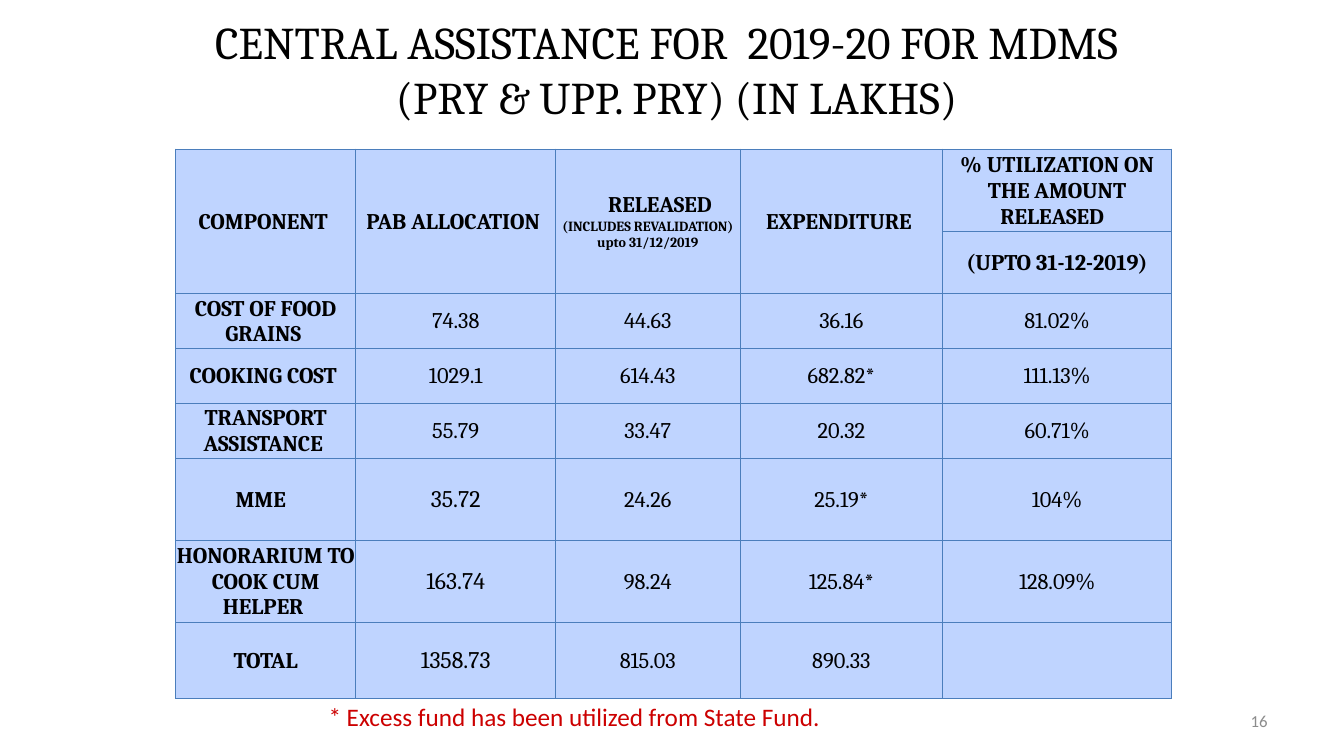
from lxml import etree
from pptx import Presentation
from pptx import util as u
from pptx.dml.color import RGBColor
from pptx.enum import text
from pptx.oxml.ns import qn

COLORS = {"black": "000000", "cell": "BFD4FF", "border": "4B7EBC",
          "note": "CC0000", "number": "8C8C8C"}
LEFT, CENTER, RIGHT = (text.PP_ALIGN.LEFT, text.PP_ALIGN.CENTER,
                       text.PP_ALIGN.RIGHT)
MIDDLE, TOP = text.MSO_ANCHOR.MIDDLE, text.MSO_ANCHOR.TOP

HEADINGS = ["COMPONENT ", "PAB ALLOCATION ", "RELEASED ", "EXPENDITURE ",
            "% UTILIZATION ON THE AMOUNT RELEASED  "]
RELEASED_NOTE = "(INCLUDES REVALIDATION) upto 31/12/2019"
UTILIZATION_NOTE = " (UPTO 31-12-2019) "
COMPONENTS = [
    ["COST OF FOOD GRAINS ", "74.38", "44.63", "36.16", "81.02%"],
    ["COOKING COST ", "1029.1", "614.43", "682.82*", "111.13%"],
    ["TRANSPORT ASSISTANCE ", "55.79", "33.47", "20.32", "60.71%"],
    ["MME  ", "35.72", "24.26", "25.19*", "104%"],
    ["HONORARIUM TO COOK CUM HELPER ", "163.74", "98.24", "125.84*", "128.09%"],
    ["TOTAL", "1358.73", "815.03", "890.33", ""],
]
COLUMN_WIDTHS = [1.79, 1.98, 1.83, 2.01, 2.27]
ROW_HEIGHTS = [0.82, 0.58, 0.55, 0.54, 0.51, 0.82, 0.77, 0.76]
LARGE_ALLOCATIONS = ("MME  ", "HONORARIUM TO COOK CUM HELPER ", "TOTAL")


class SlideBuilder:
    def __init__(self, presentation):
        self.slide = presentation.slides.add_slide(presentation.slide_layouts[6])
        self.heading_font = "Cambria"
        self.body_font = "Calibri"

    def add_run(self, paragraph, words, size, font, color="black", bold=False):
        run = paragraph.add_run()
        run.text = words
        run.font.size = u.Pt(size)
        run.font.name = font
        run.font.bold = bold
        run.font.color.rgb = RGBColor.from_string(COLORS[color])

    def add_text(self, box, lines, size, font, color="black", align=LEFT,
                 anchor=TOP, bottom=0.05):
        shape = self.slide.shapes.add_textbox(*map(u.Inches, box))
        frame = shape.text_frame
        frame.word_wrap = True
        frame.vertical_anchor = anchor
        frame.margin_bottom = u.Inches(bottom)
        paragraph = frame.paragraphs[0]
        paragraph.alignment = align
        for index, line in enumerate(lines):
            if index:
                paragraph.add_line_break()
            self.add_run(paragraph, line, size, font, color)
        return shape

    def add_table(self, left, top, widths, heights):
        frame = self.slide.shapes.add_table(
            len(heights), len(widths), u.Inches(left), u.Inches(top),
            u.Inches(sum(widths)), u.Inches(sum(heights)))
        table = frame.table
        table.first_row = table.horz_banding = False
        for column, width in zip(table.columns, widths):
            column.width = u.Inches(width)
        for row, height in zip(table.rows, heights):
            row.height = u.Inches(height)
        for cell in table.iter_cells():
            self.style_cell(cell)
        return table

    def style_cell(self, cell):
        cell.margin_left = cell.margin_right = cell.margin_top = u.Inches(0.01)
        cell.margin_bottom = 0
        cell.vertical_anchor = MIDDLE
        # Borders come before the fill in the cell properties
        properties = cell._tc.get_or_add_tcPr()
        for side in ("a:lnL", "a:lnR", "a:lnT", "a:lnB"):
            line = etree.SubElement(properties, qn(side), w=str(u.Pt(0.75)))
            fill = etree.SubElement(line, qn("a:solidFill"))
            etree.SubElement(fill, qn("a:srgbClr"), val=COLORS["border"])
        cell.fill.solid()
        cell.fill.fore_color.rgb = RGBColor.from_string(COLORS["cell"])

    def fill_cell(self, cell, words, size=16, bold=False):
        paragraph = cell.text_frame.paragraphs[0]
        paragraph.alignment = CENTER
        if words:
            self.add_run(paragraph, words, size, self.heading_font, bold=bold)
        else:
            paragraph.font.size = u.Pt(size)
        return paragraph


def main():
    presentation = Presentation()
    presentation.slide_width = u.Inches(13.33)
    presentation.slide_height = u.Inches(7.5)
    builder = SlideBuilder(presentation)

    # Slide number and title
    builder.add_text((9.56, 6.95, 3.11, 0.4), ["16"], 12, builder.body_font,
                     "number", RIGHT, MIDDLE)
    builder.add_text((0.92, 0.39, 11.58, 1.09),
                     ["CENTRAL ASSISTANCE FOR  2019-20 FOR MDMS  ",
                      "(PRY & UPP. PRY) (IN LAKHS)"],
                     32.4, builder.heading_font, align=CENTER, anchor=MIDDLE,
                     bottom=0.55)

    # Table heading: the first four columns span both heading rows
    table = builder.add_table(1.74, 1.48, COLUMN_WIDTHS, ROW_HEIGHTS)
    for column, heading in enumerate(HEADINGS):
        cell = table.cell(0, column)
        if column < 4:
            cell.merge(table.cell(1, column))
        paragraph = builder.fill_cell(cell, heading, bold=True)
        if heading == "RELEASED ":
            paragraph._p.get_or_add_pPr().set("indent", str(u.Inches(0.24)))
            builder.add_run(paragraph, RELEASED_NOTE, 10, builder.heading_font,
                            bold=True)
    builder.fill_cell(table.cell(1, 4), UTILIZATION_NOTE, bold=True)

    # Table body
    for row, values in enumerate(COMPONENTS, start=2):
        for column, value in enumerate(values):
            large = column == 1 and values[0] in LARGE_ALLOCATIONS
            builder.fill_cell(table.cell(row, column), value,
                              17 if large else 16, bold=column == 0)

    # Footnote
    footnote = builder.add_text(
        (3.16, 6.91, 6.42, 0.4),
        ["* Excess fund has been utilized from State Fund."],
        18, builder.body_font, "note")
    footnote.text_frame.auto_size = text.MSO_AUTO_SIZE.SHAPE_TO_FIT_TEXT

    presentation.save("out.pptx")


if __name__ == "__main__":
    main()
